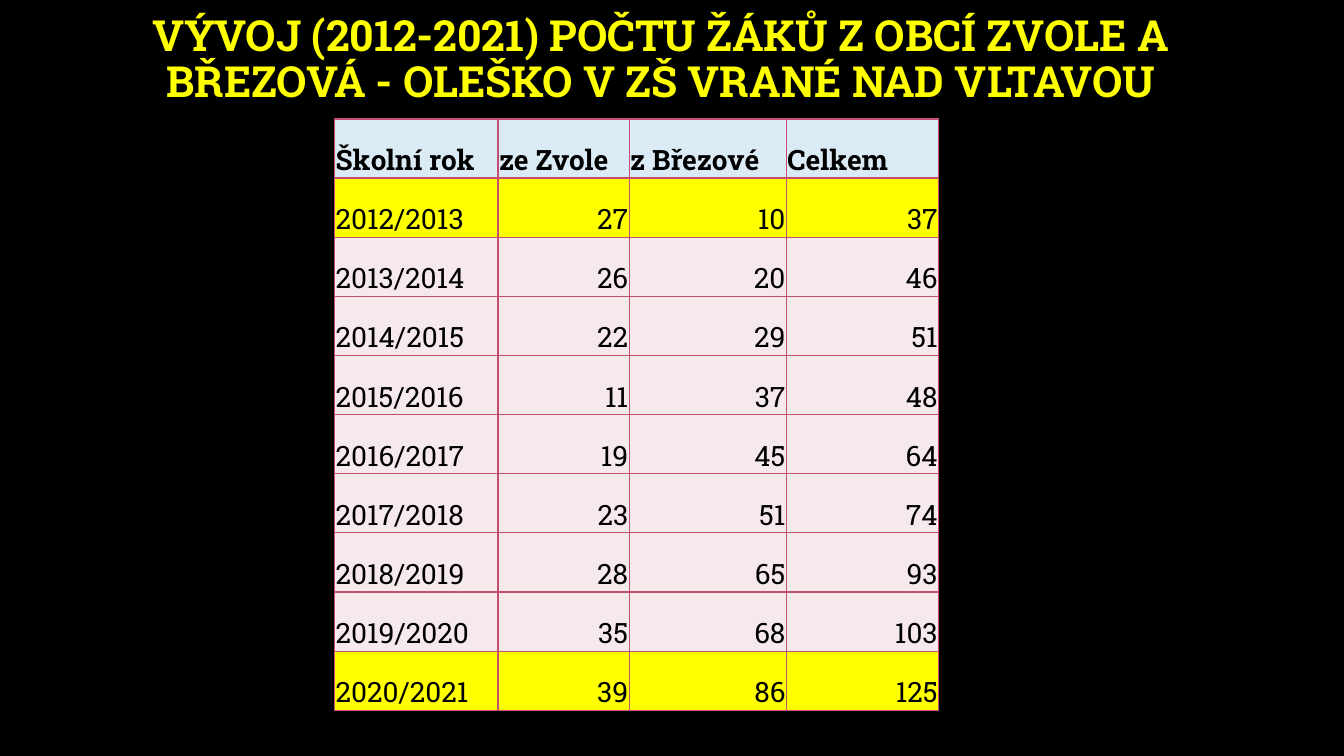
from lxml.etree import SubElement
from pptx import Presentation
from pptx.dml.color import RGBColor as RGB
from pptx.enum.text import MSO_ANCHOR as Anchor, PP_ALIGN as Align
from pptx.oxml.ns import qn
from pptx.util import Inches, Pt

COLORS = {
    "background": "000000",
    "title": "FFFF00",
    "text": "000000",
    "header": "DBEBF5",
    "highlight": "FFFF00",
    "body": "F5E9EB",
    "border": "C54F71",
}
FONT = "Roboto Slab"
FIRST_YEAR = 2012
HEADINGS = ["Školní rok", "ze Zvole", "z Březové", "Celkem"]
ZVOLE = [27, 26, 22, 11, 19, 23, 28, 35, 39]
BREZOVA = [10, 20, 29, 37, 45, 51, 65, 68, 86]
COLUMN_WIDTHS = [1.62, 1.3, 1.56, 1.51]
ROW_HEIGHT = 0.587


def set_font(font, size, color, bold):
    font.name = FONT
    font.size = Pt(size)
    font.bold = bold
    font.color.rgb = RGB.from_string(COLORS[color])


def add_borders(cell):
    props = cell._tc.get_or_add_tcPr()
    for position, side in enumerate(("lnL", "lnR", "lnT", "lnB")):
        line = SubElement(props, qn(f"a:{side}"), w=str(Pt(1)))
        fill = SubElement(line, qn("a:solidFill"))
        SubElement(fill, qn("a:srgbClr"), val=COLORS["border"])
        props.insert(position, line)


prs = Presentation()
prs.slide_width = Inches(13.33)
prs.slide_height = Inches(7.5)
slide = prs.slides.add_slide(prs.slide_layouts[5])
slide.background.fill.solid()
slide.background.fill.fore_color.rgb = RGB.from_string(COLORS["background"])

title = slide.shapes.title
title.left, title.top = Inches(-0.07), Inches(0.11)
title.width, title.height = Inches(13.25), Inches(1.45)
heading = title.text_frame
heading.text = "VÝVOJ (2012-2021) POČTU ŽÁKŮ Z OBCÍ ZVOLE A\vBŘEZOVÁ - OLEŠKO V ZŠ VRANÉ NAD VLTAVOU"
heading.word_wrap = True
heading.vertical_anchor = Anchor.TOP
heading.margin_top = Inches(0.03)
heading_line = heading.paragraphs[0]
heading_line.alignment = Align.CENTER
heading_line.line_spacing = 0.9
set_font(heading_line.font, 30.6, "title", True)

rows = [HEADINGS]
for year, (zvole, brezova) in enumerate(zip(ZVOLE, BREZOVA), FIRST_YEAR):
    rows.append([f"{year}/{year + 1}", zvole, brezova, zvole + brezova])

pupils = slide.shapes.add_table(
    len(rows), len(HEADINGS), Inches(3.32), Inches(1.18),
    Inches(sum(COLUMN_WIDTHS)), Inches(ROW_HEIGHT * len(rows)),
).table
for column, width in zip(pupils.columns, COLUMN_WIDTHS):
    column.width = Inches(width)

row_fills = ["header", "highlight"] + ["body"] * (len(rows) - 3) + ["highlight"]
for r, (values, row_fill) in enumerate(zip(rows, row_fills)):
    pupils.rows[r].height = Inches(ROW_HEIGHT)
    for c, value in enumerate(values):
        cell = pupils.cell(r, c)
        cell.text = str(value)
        cell.vertical_anchor = Anchor.BOTTOM
        cell.margin_left = cell.margin_right = cell.margin_top = Inches(0.01)
        cell.margin_bottom = 0
        cell.fill.solid()
        cell.fill.fore_color.rgb = RGB.from_string(COLORS[row_fill])
        add_borders(cell)
        entry = cell.text_frame.paragraphs[0]
        entry.alignment = Align.RIGHT if r and c else Align.LEFT
        set_font(entry.font, 20, "text", r == 0)

prs.save("out.pptx")
